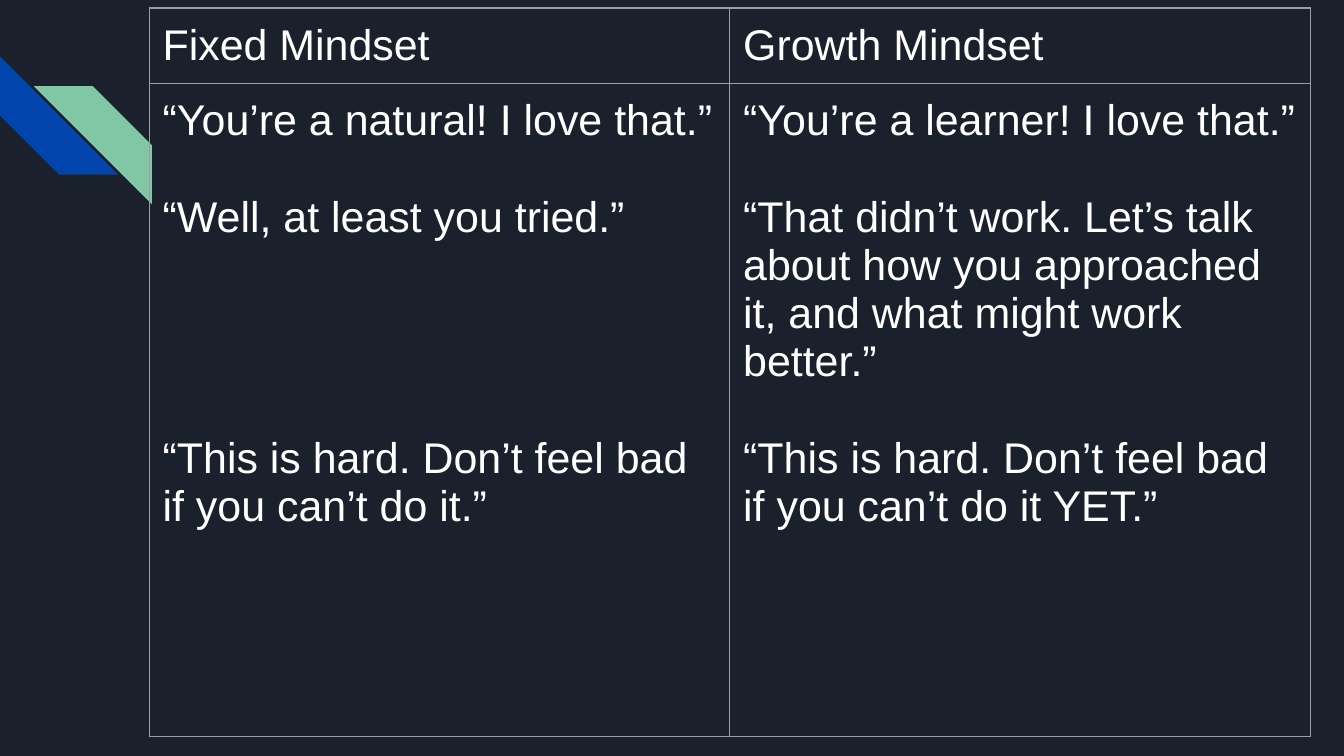
import pptx
import pptx.util
import pptx.dml.color
import pptx.enum.shapes
import pptx.oxml
import pptx.oxml.ns

Inches, Pt = pptx.util.Inches, pptx.util.Pt
COLORS = {"background": "1B212C", "blue": "0145AC", "green": "82C7A5",
          "border": "9E9E9E", "text": "FFFFFF"}
TEXT_SIZE = 23
LINE_PITCH = 25.85
HEADINGS = ["Fixed Mindset", "Growth Mindset"]
QUOTES = [
    [("“You’re a natural! I love that.”", 0),
     ("“Well, at least you tried.”", 1),
     ("“This is hard. Don’t feel bad if you can’t do it.”", 4)],
    [("“You’re a learner! I love that.”", 0),
     ("“That didn’t work. Let’s talk about how you approached it, "
      "and what might work better.”", 1),
     ("“This is hard. Don’t feel bad if you can’t do it YET.”", 1)],
]


def color(name):
    return pptx.dml.color.RGBColor.from_string(COLORS[name])


def apply_format(target, values):
    for name, value in values.items():
        setattr(target, name, value)


def add_stripes(page, box):
    left, top, size = box
    stripes = [("blue", 0, 0, 270), ("green", 0.25, 0.22, 90)]
    for name, across, down, angle in stripes:
        stripe = page.shapes.add_shape(
            pptx.enum.shapes.MSO_SHAPE.DIAGONAL_STRIPE,
            Inches(left + across), Inches(top + down), Inches(size), Inches(size))
        stripe.rotation = angle
        stripe.shadow.inherit = False
        stripe.fill.solid()
        stripe.fill.fore_color.rgb = color(name)
        stripe.line.fill.background()


def add_borders(cell):
    properties = cell._tc.get_or_add_tcPr()
    for index, side in enumerate("LRTB"):
        properties.insert(index, pptx.oxml.parse_xml(
            f'<a:ln{side} {pptx.oxml.ns.nsdecls("a")} w="{Pt(0.75)}"><a:solidFill>'
            f'<a:srgbClr val="{COLORS["border"]}"/></a:solidFill></a:ln{side}>'))


def fill_cell(cell, lines):
    sides = ("left", "right", "top", "bottom")
    apply_format(cell, {f"margin_{side}": Inches(0.1) for side in sides})
    cell.fill.background()
    add_borders(cell)
    frame = cell.text_frame
    for index, (text, gap) in enumerate(lines):
        para = frame.add_paragraph() if index else frame.paragraphs[0]
        para.space_before = Pt(gap * LINE_PITCH)
        span = para.add_run()
        span.text = text
        apply_format(span.font, {"name": "Arial", "size": Pt(TEXT_SIZE), "bold": False})
        span.font.color.rgb = color("text")


def add_mindset_table(page, box):
    left, top, width, height = box
    heading_height = 0.55
    table = page.shapes.add_table(2, len(HEADINGS), *map(Inches, box)).table
    apply_format(table, {"first_row": False, "horz_banding": False})
    table.rows[0].height = Inches(heading_height)
    table.rows[1].height = Inches(height - heading_height)
    for index, (heading, quotes) in enumerate(zip(HEADINGS, QUOTES)):
        table.columns[index].width = Inches(width / len(HEADINGS))
        fill_cell(table.cell(0, index), [(heading, 0)])
        fill_cell(table.cell(1, index), quotes)


def main():
    deck = pptx.Presentation()
    apply_format(deck, {"slide_width": Inches(10), "slide_height": Inches(10 * 9 / 16)})
    page = deck.slides.add_slide(deck.slide_layouts[6])
    page.background.fill.solid()
    page.background.fill.fore_color.rgb = color("background")
    add_stripes(page, (0, 0.42, 0.88))
    add_mindset_table(page, (1.11, 0.06, 8.64, 5.41))
    deck.save("out.pptx")


if __name__ == "__main__":
    main()
